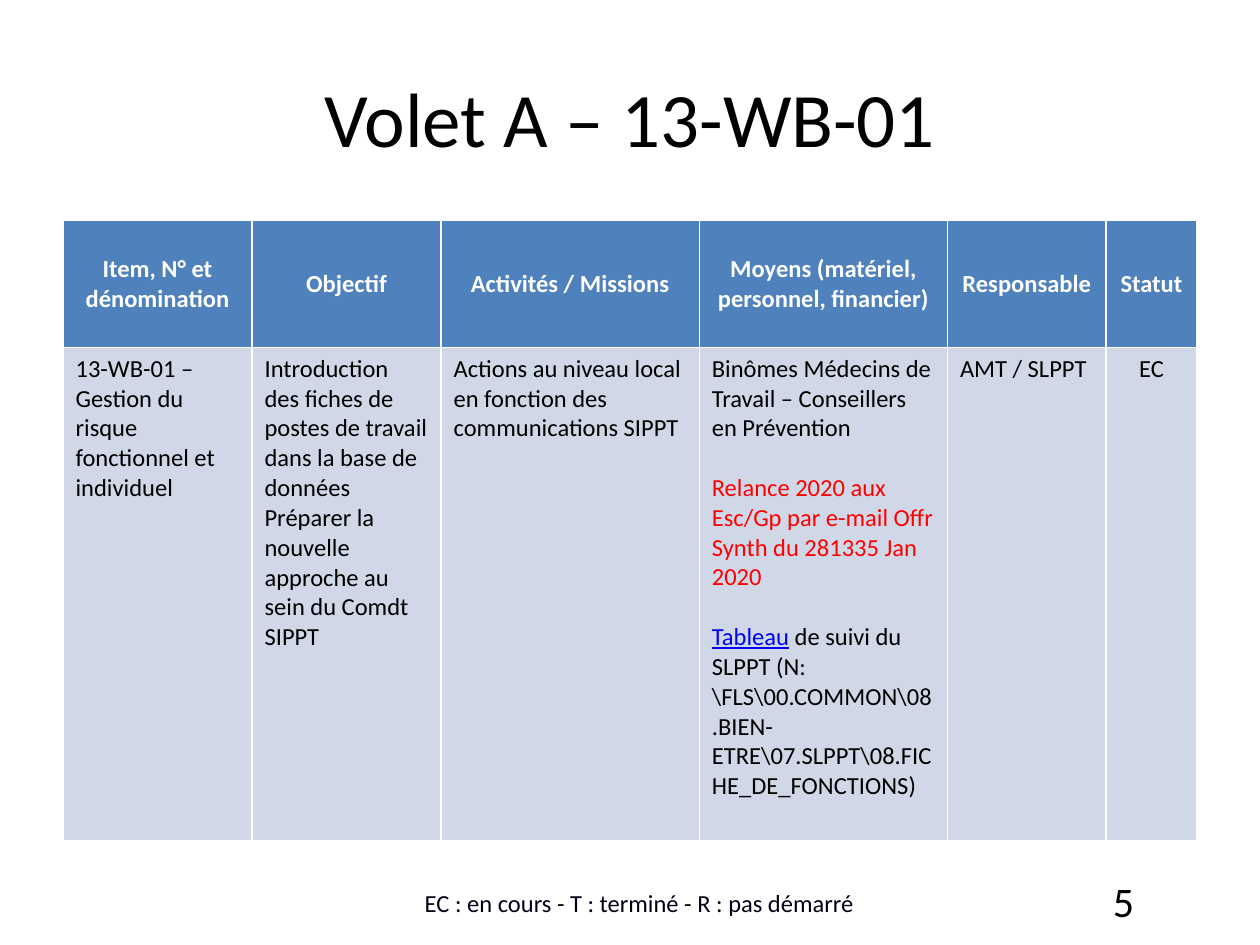
from dataclasses import dataclass

from pptx import Presentation
from pptx.dml.color import RGBColor
from pptx.enum.text import MSO_ANCHOR as Anchor, PP_ALIGN as Align
from pptx.util import Inches, Pt

FONT = "Calibri"
BLACK = RGBColor(0, 0, 0)
WHITE = RGBColor(255, 255, 255)
RED = RGBColor(255, 0, 0)
LINK = RGBColor(0, 0, 255)
NAVY = RGBColor(0, 0, 0x18)
HEAD = RGBColor(0x4F, 0x81, 0xBD)
BODY = RGBColor(0xD0, 0xD8, 0xE8)
GAP = 17  # one line of 14 pt text


@dataclass
class Run:
    text: str
    color: RGBColor = BLACK
    size: int = 14
    bold: bool = False
    underline: bool = False


@dataclass
class Para:
    runs: list[Run]
    align: Align = Align.LEFT
    before: int = 0


@dataclass
class Column:
    head: str
    width: float
    paras: list[Para]


@dataclass
class Label:
    para: Para
    box: tuple[float, float, float, float]
    anchor: Anchor


def plain(text: str, align: Align = Align.LEFT) -> Para:
    return Para([Run(text)], align)


def write(frame, paras: list[Para]) -> None:
    """Fill a text frame with formatted paragraphs."""
    frame.word_wrap = True
    for i, item in enumerate(paras):
        para = frame.add_paragraph() if i else frame.paragraphs[0]
        para.alignment = item.align
        if item.before:
            para.space_before = Pt(item.before)
        for part in item.runs:
            run = para.add_run()
            run.text = part.text
            style = {"name": FONT, "size": Pt(part.size),
                     "bold": part.bold, "underline": part.underline}
            for key, value in style.items():
                setattr(run.font, key, value)
            run.font.color.rgb = part.color


def paint(cell, paras: list[Para], fill: RGBColor, anchor: Anchor) -> None:
    cell.fill.solid()
    cell.fill.fore_color.rgb = fill
    cell.vertical_anchor = anchor
    write(cell.text_frame, paras)


def draw_table(slide, columns: list[Column]) -> None:
    shape = slide.shapes.add_table(2, len(columns), Inches(0.5), Inches(1.75),
                                   Inches(9), Inches(4.92))
    table = shape.table
    for row, height in zip(table.rows, (1.01, 3.91)):
        row.height = Inches(height)
    for i, col in enumerate(columns):
        table.columns[i].width = Inches(col.width)
        head = Para([Run(col.head, WHITE, bold=True)], Align.CENTER)
        paint(table.cell(0, i), [head], HEAD, Anchor.MIDDLE)
        paint(table.cell(1, i), col.paras, BODY, Anchor.TOP)


def draw_label(slide, label: Label) -> None:
    box = slide.shapes.add_textbox(*map(Inches, label.box))
    box.text_frame.vertical_anchor = label.anchor
    write(box.text_frame, [label.para])


COLUMNS = [
    Column("Item, N° et dénomination", 1.5, [
        plain("13-WB-01 – Gestion du risque fonctionnel et individuel")]),
    Column("Objectif", 1.5, [
        plain("Introduction des fiches de postes de travail dans la base de données"),
        plain("Préparer la nouvelle approche au sein du Comdt SIPPT")]),
    Column("Activités / Missions", 2.05, [
        plain("Actions au niveau local en fonction des communications SIPPT")]),
    Column("Moyens (matériel, personnel, financier)", 1.97, [
        plain("Binômes Médecins de Travail – Conseillers en Prévention"),
        Para([Run("Relance 2020 aux Esc/Gp par e-mail Offr Synth du 281335 Jan 2020",
                  RED)], before=GAP),
        Para([Run("Tableau", LINK, underline=True),
              Run(r" de suivi du SLPPT (N:\FLS\00.COMMON\08.BIEN-ETRE"
                  r"\07.SLPPT\08.FICHE_DE_FONCTIONS)")], before=GAP)]),
    Column("Responsable", 1.26, [plain("AMT / SLPPT")]),
    Column("Statut", 0.72, [plain("EC", Align.CENTER)]),
]

LABELS = [
    Label(Para([Run("5", size=24)], Align.RIGHT),
          (7.17, 6.95, 1.93, 0.4), Anchor.MIDDLE),
    Label(Para([Run("EC : en cours - T : terminé - R : pas démarré", NAVY)],
               Align.CENTER),
          (2.32, 6.95, 5.51, 0.38), Anchor.BOTTOM),
]


def main() -> None:
    deck = Presentation()
    deck.slide_width, deck.slide_height = Inches(10), Inches(7.5)
    slide = deck.slides.add_slide(deck.slide_layouts[5])

    # Title
    title = slide.shapes.title
    place = {"left": 0.5, "top": 0.3, "width": 9, "height": 1.25}
    for key, value in place.items():
        setattr(title, key, Inches(value))
    title.text_frame.vertical_anchor = Anchor.MIDDLE
    write(title.text_frame,
          [Para([Run("Volet A – 13-WB-01", size=44)], Align.CENTER)])

    # Action table, then legend and page number
    draw_table(slide, COLUMNS)
    for label in LABELS:
        draw_label(slide, label)

    deck.save("out.pptx")


if __name__ == "__main__":
    main()
